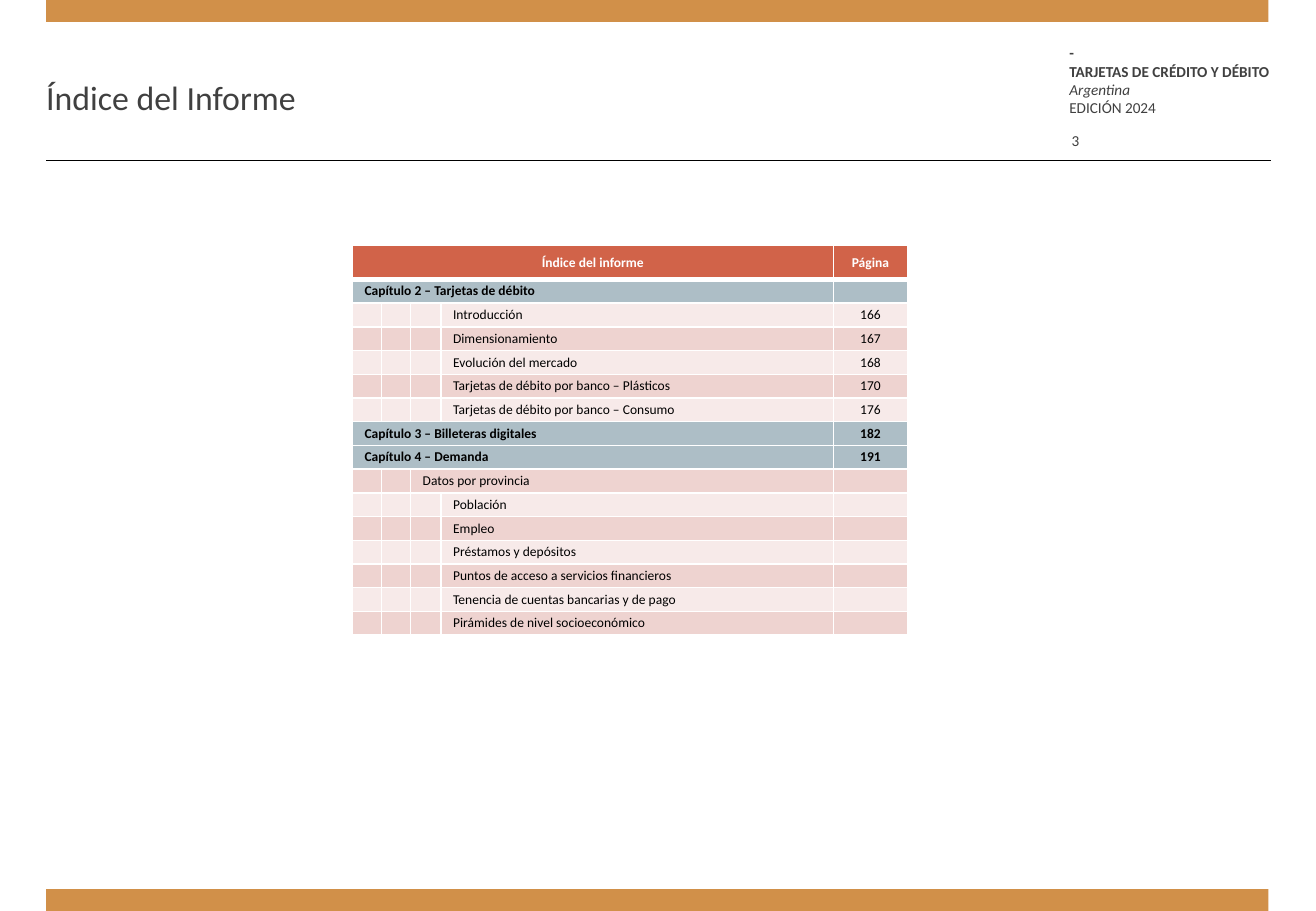
"""Build the index slide of the card market report."""
from dataclasses import dataclass

from lxml.etree import SubElement
from pptx import Presentation
from pptx.dml.color import RGBColor
from pptx.enum.shapes import MSO_CONNECTOR, MSO_SHAPE
from pptx.enum.text import MSO_ANCHOR, MSO_AUTO_SIZE, PP_ALIGN
from pptx.oxml import parse_xml
from pptx.oxml.ns import nsdecls, qn
from pptx.util import Inches, Pt


@dataclass(frozen=True)
class Theme:
    font: str = "Calibri"
    gold: str = "D19049"
    gray: str = "404040"
    black: str = "000000"
    white: str = "FFFFFF"
    head: str = "D16349"
    chapter: str = "ADBEC6"
    bands: tuple[str, str] = ("F7EAE9", "EED3D0")
    title: int = 20
    note: int = 9
    cell: int = 8
    thin: int = 1
    thick: int = 3


@dataclass(frozen=True)
class Box:
    left: float
    top: float
    width: float
    height: float

    def emu(self) -> tuple:
        return tuple(map(Inches, (self.left, self.top, self.width, self.height)))


@dataclass(frozen=True)
class Line:
    text: str
    bold: bool = False
    italic: bool = False


@dataclass(frozen=True)
class Entry:
    text: str
    page: str = ""
    level: int = 3


THEME = Theme()
LEFT, WIDTH, RULE = 0.38, 10.06, 1.32
BANDS = [Box(LEFT, top, WIDTH, 0.18) for top in (0, 7.32)]
GRID = Box(2.9, 2.02, 4.55, 3.21)
COLS = (0.23, 0.23, 0.25, 3.23, 0.61)
HEAD = 0.28
LABEL = [
    Line("-", bold=True),
    Line("TARJETAS DE CRÉDITO Y DÉBITO", bold=True),
    Line("Argentina", italic=True),
    Line("EDICIÓN 2024"),
]
ENTRIES = [
    Entry("Índice del informe", "Página", 0),
    Entry("Capítulo 2 – Tarjetas de débito", level=0),
    Entry("Introducción", "166"),
    Entry("Dimensionamiento", "167"),
    Entry("Evolución del mercado", "168"),
    Entry("Tarjetas de débito por banco – Plásticos", "170"),
    Entry("Tarjetas de débito por banco – Consumo", "176"),
    Entry("Capítulo 3 – Billeteras digitales", "182", 0),
    Entry("Capítulo 4 – Demanda", "191", 0),
    Entry("Datos por provincia", level=2),
    Entry("Población"),
    Entry("Empleo"),
    Entry("Préstamos y depósitos"),
    Entry("Puntos de acceso a servicios financieros"),
    Entry("Tenencia de cuentas bancarias y de pago"),
    Entry("Pirámides de nivel socioeconómico"),
]


def rgb(color: str) -> RGBColor:
    return RGBColor.from_string(color)


def write(para, line: Line, size: int, color: str) -> None:
    run = para.add_run()
    run.text = line.text
    font = run.font
    font.name, font.size = THEME.font, Pt(size)
    font.bold, font.italic = line.bold, line.italic
    font.color.rgb = rgb(color)


def fit(frame, inset: float, anchor: MSO_ANCHOR) -> None:
    frame.word_wrap = True
    frame.auto_size = MSO_AUTO_SIZE.NONE
    frame.vertical_anchor = anchor
    frame.margin_left = frame.margin_right = Inches(inset)
    frame.margin_top = frame.margin_bottom = 0


def add_text(slide, box: Box, lines: list[Line], inset: float, anchor: MSO_ANCHOR) -> None:
    frame = slide.shapes.add_textbox(*box.emu()).text_frame
    fit(frame, inset, anchor)
    for i, line in enumerate(lines):
        para = frame.add_paragraph() if i else frame.paragraphs[0]
        write(para, line, THEME.note, THEME.gray)


def add_frame(slide) -> None:
    for box in BANDS:
        band = slide.shapes.add_shape(MSO_SHAPE.RECTANGLE, *box.emu())
        band.shadow.inherit = False
        band.fill.solid()
        band.fill.fore_color.rgb = rgb(THEME.gold)
        band.line.fill.background()
    rule = slide.shapes.add_connector(
        MSO_CONNECTOR.STRAIGHT, Inches(LEFT), Inches(RULE), Inches(10.46), Inches(RULE))
    rule.line.color.rgb = rgb(THEME.black)
    rule.line.width = Pt(0.75)
    SubElement(rule._element.spPr, qn("a:effectLst"))


def add_title(slide, text: str) -> None:
    title = slide.shapes.title
    title.left, title.top, title.width, title.height = Box(LEFT, 0.44, 7.01, 0.71).emu()
    fit(title.text_frame, 0, MSO_ANCHOR.MIDDLE)
    para = title.text_frame.paragraphs[0]
    para.alignment = PP_ALIGN.LEFT
    write(para, Line(text), THEME.title, THEME.gray)


def style(cell, row: int, fill: str) -> None:
    cell.fill.solid()
    cell.fill.fore_color.rgb = rgb(fill)
    cell.vertical_anchor = MSO_ANCHOR.MIDDLE
    cell.margin_left = cell.margin_right = Inches(0.1)
    cell.margin_top = cell.margin_bottom = 0
    for i, side in enumerate("LRTB"):
        thick = (row, side) in ((0, "B"), (1, "T"))
        width = Pt(THEME.thick if thick else THEME.thin)
        cell._tc.tcPr.insert(i, parse_xml(
            f'<a:ln{side} {nsdecls("a")} w="{width}"><a:solidFill>'
            f'<a:srgbClr val="{THEME.white}"/></a:solidFill></a:ln{side}>'))


def add_index(slide) -> None:
    table = slide.shapes.add_table(len(ENTRIES), len(COLS), *GRID.emu()).table
    table.first_row = table.horz_banding = False
    for col, width in zip(table.columns, COLS):
        col.width = Inches(width)
    step = (GRID.height - HEAD) / (len(ENTRIES) - 1)
    last = len(COLS) - 1
    for r, entry in enumerate(ENTRIES):
        table.rows[r].height = Inches(step if r else HEAD)
        top = entry.level == 0
        fill = THEME.chapter if top else THEME.bands[r % 2]
        fill = fill if r else THEME.head
        color = THEME.black if r else THEME.white
        words = {entry.level: entry.text, last: entry.page}
        if entry.level < last - 1:
            table.cell(r, entry.level).merge(table.cell(r, last - 1))
        for c in range(len(COLS)):
            cell = table.cell(r, c)
            style(cell, r, fill)
            para = cell.text_frame.paragraphs[0]
            if c == last or r == 0:
                para.alignment = PP_ALIGN.CENTER
            if words.get(c):
                write(para, Line(words[c], bold=top), THEME.cell, color)
            else:
                SubElement(para._p, qn("a:endParaRPr"), sz=str(THEME.cell * 100))


def main() -> None:
    deck = Presentation()
    deck.slide_width, deck.slide_height = Inches(10.83), Inches(7.5)
    slide = deck.slides.add_slide(deck.slide_layouts[5])
    add_frame(slide)
    add_text(slide, Box(8.8, 0.36, 1.77, 0.71), LABEL, 0, MSO_ANCHOR.TOP)
    add_title(slide, "Índice del Informe")
    add_text(slide, Box(8.72, 1.07, 1.64, 0.17), [Line("3")], 0.1, MSO_ANCHOR.MIDDLE)
    add_index(slide)
    deck.save("out.pptx")


if __name__ == "__main__":
    main()
